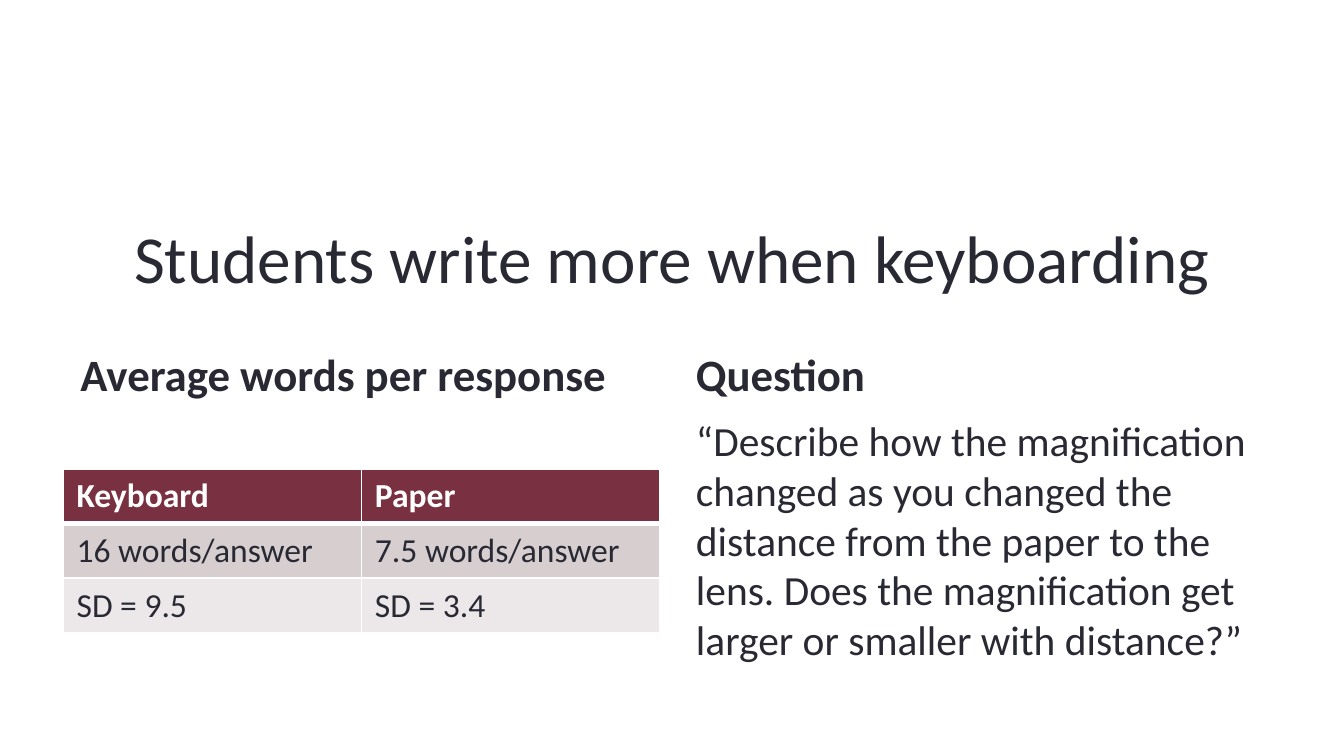
from lxml import etree
from pptx import Presentation
from pptx.dml.color import RGBColor
from pptx.enum.text import MSO_ANCHOR, PP_ALIGN
from pptx.oxml.ns import qn
from pptx.util import Inches, Pt

TOP, MIDDLE, BOTTOM = MSO_ANCHOR.TOP, MSO_ANCHOR.MIDDLE, MSO_ANCHOR.BOTTOM
LEFT, CENTER = PP_ALIGN.LEFT, PP_ALIGN.CENTER

# Content
TITLE = "Students write more when keyboarding"
HEADS = ["Average words per response", "Question"]
QUOTE = ("“Describe how the magnification changed as you changed the "
         "distance from the paper to the lens. Does the magnification get "
         "larger or smaller with distance?”")
ROWS = [
    ("Keyboard", "Paper"),
    ("16 words/answer", "7.5 words/answer"),
    ("SD = 9.5", "SD = 3.4"),
]

# Look
FONT = "Calibri"
COLORS = {"ink": "292934", "white": "FFFFFF", "head": "793141",
          "dark": "D7CECF", "light": "ECE8E9"}
FILLS = ["head", "dark", "light"]

# Layout in inches
EDGE, WIDE, COL, GAP = 0.5, 9, 4.42, 0.16
COLS = [EDGE, EDGE + COL + GAP]
TABLE = (0.47, 3.49, 4.44, 1.22)


def color(name):
    return RGBColor.from_string(COLORS[name])


def style(para, size, ink="ink", bold=False, **form):
    for key, val in form.items():
        setattr(para, key, val)
    look = {"name": FONT, "size": Pt(size), "bold": bold}
    for key, val in look.items():
        setattr(para.font, key, val)
    para.font.color.rgb = color(ink)


def add_text(slide, box, text, size, anchor=TOP, **form):
    frame = slide.shapes.add_textbox(*map(Inches, box)).text_frame
    frame.word_wrap = True
    frame.vertical_anchor = anchor
    frame.text = text
    style(frame.paragraphs[0], size, **form)


def add_edges(cell, widths):
    props = cell._tc.get_or_add_tcPr()
    for side, width in widths.items():
        line = etree.SubElement(props, qn("a:ln" + side), w=str(Pt(width)))
        fill = etree.SubElement(line, qn("a:solidFill"))
        etree.SubElement(fill, qn("a:srgbClr"), val=COLORS["white"])


def add_grid(slide):
    shape = slide.shapes.add_table(len(ROWS), len(ROWS[0]),
                                   *map(Inches, TABLE))
    grid = shape.table
    for r, row in enumerate(ROWS):
        for c, text in enumerate(row):
            cell = grid.cell(r, c)
            cell.text = text
            # The rule under the header row is thicker
            add_edges(cell, {"L": 1, "R": 1, "T": 3 if r == 1 else 1,
                             "B": 3 if r == 0 else 1})
            cell.fill.solid()
            cell.fill.fore_color.rgb = color(FILLS[r])
            style(cell.text_frame.paragraphs[0], 18,
                  ink="ink" if r else "white", bold=r == 0)


def main():
    deck = Presentation()
    # Widescreen, 16 to 9
    deck.slide_width = Inches(10)
    deck.slide_height = deck.slide_width * 9 // 16
    slide = deck.slides.add_slide(deck.slide_layouts[6])

    # Title and column heads
    add_text(slide, (EDGE, 1.44, WIDE, 0.94), TITLE, 36, MIDDLE,
             alignment=CENTER)
    for left, head in zip(COLS, HEADS):
        add_text(slide, (left, 2.51, COL, 0.52), head, 24, BOTTOM,
                 bold=True, alignment=LEFT)

    # Question and results
    add_text(slide, (COLS[1], 3.04, COL, 2.12), QUOTE, 22.2,
             alignment=LEFT)
    add_grid(slide)
    deck.save("out.pptx")


if __name__ == "__main__":
    main()
